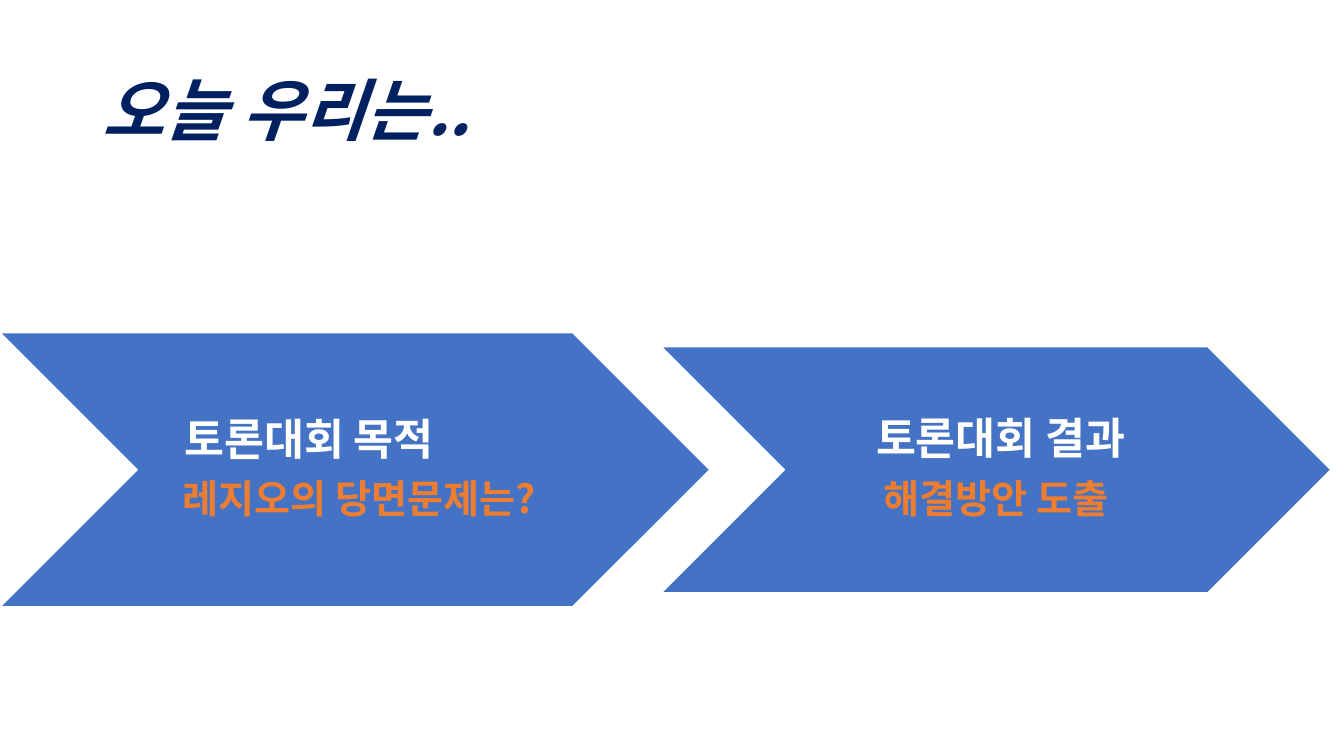
from dataclasses import dataclass

from lxml.etree import SubElement
from pptx import Presentation
from pptx.dml.color import RGBColor
from pptx.enum.shapes import MSO_SHAPE as Preset
from pptx.enum.text import MSO_ANCHOR as Anchor, PP_ALIGN as Align
from pptx.oxml.ns import qn
from pptx.util import Inches, Pt

WIDTH, HEIGHT = 13.33, 7.5
MIDDLE = 4.66 / HEIGHT  # shared centre line of the chevrons
FONT = "Noto Sans CJK KR"
COLORS = {"navy": "002060", "blue": "4472C4", "orange": "ED7D31", "white": "FFFFFF"}


@dataclass
class Step:
    """A chevron, placed by shares of the slide's size."""
    left: float
    width: float
    height: float
    label_width: float
    heading: str
    detail: str
    indent: float = 0  # a heading with an indent is set from the left


STEPS = [
    Step(0, 7.04 / WIDTH, 2.72 / HEIGHT, 4.32 / WIDTH,
         "토론대회 목적", "레지오의 당면문제는?", 0.33 / WIDTH),
    Step(6.56 / WIDTH, 6.64 / WIDTH, 2.44 / HEIGHT, 4.2 / WIDTH,
         "토론대회 결과", "해결방안 도출 "),
]


def color(name: str) -> RGBColor:
    return RGBColor.from_string(COLORS[name])


def place(left: float, top: float, width: float, height: float) -> list:
    """Turn shares of the slide into lengths."""
    return [Inches(left * WIDTH), Inches(top * HEIGHT),
            Inches(width * WIDTH), Inches(height * HEIGHT)]


def add_box(page, area: list, left_inset: float, right_inset: float):
    frame = page.shapes.add_textbox(*area).text_frame
    frame.word_wrap = True
    frame.vertical_anchor = Anchor.MIDDLE
    frame.margin_left, frame.margin_right = Inches(left_inset), Inches(right_inset)
    return frame


def write(para, text: str, *, size: float, fill: str, italic: bool = False,
          align=Align.LEFT, after: int = 0, indent: float = 0) -> None:
    para.alignment = align
    para.line_spacing = 0.9
    properties = para._p.get_or_add_pPr()
    if after:
        spacing = SubElement(properties, qn("a:spcAft"))
        SubElement(spacing, qn("a:spcPct")).set("val", str(after * 1000))
    if indent:
        properties.set("marL", str(Inches(indent * WIDTH)))
    span = para.add_run()
    span.text = text
    font = span.font
    font.size, font.bold, font.italic = Pt(size), True, italic
    font.color.rgb = color(fill)
    font.name = FONT
    SubElement(span._r.get_or_add_rPr(), qn("a:ea")).set("typeface", FONT)


def add_step(page, step: Step) -> None:
    top = MIDDLE - step.height / 2
    chevron = page.shapes.add_shape(
        Preset.CHEVRON, *place(step.left, top, step.width, step.height))
    chevron.shadow.inherit = False
    chevron.fill.solid()
    chevron.fill.fore_color.rgb = color("blue")
    chevron.line.color.rgb = color("white")
    chevron.line.width = Pt(1)

    # Label, centred on the chevron
    label_left = step.left + (step.width - step.label_width) / 2
    box = add_box(page, place(label_left, top, step.label_width, step.height), 0.14, 0.05)
    write(box.paragraphs[0], step.heading, size=31, fill="white", after=35,
          align=Align.LEFT if step.indent else Align.CENTER, indent=step.indent)
    write(box.add_paragraph(), step.detail, size=28, fill="orange", after=35,
          align=Align.CENTER)


def main() -> None:
    deck = Presentation()
    deck.slide_width, deck.slide_height = Inches(WIDTH), Inches(HEIGHT)
    page = deck.slides.add_slide(deck.slide_layouts[6])

    # Title
    title = add_box(page, place(0.92 / WIDTH, 0.4 / HEIGHT, 11.5 / WIDTH, 1.45 / HEIGHT),
                    0.1, 0.1)
    write(title.paragraphs[0], "오늘 우리는..", size=48, fill="navy", italic=True)

    # Chevrons
    for step in STEPS:
        add_step(page, step)

    deck.save("out.pptx")


if __name__ == "__main__":
    main()
